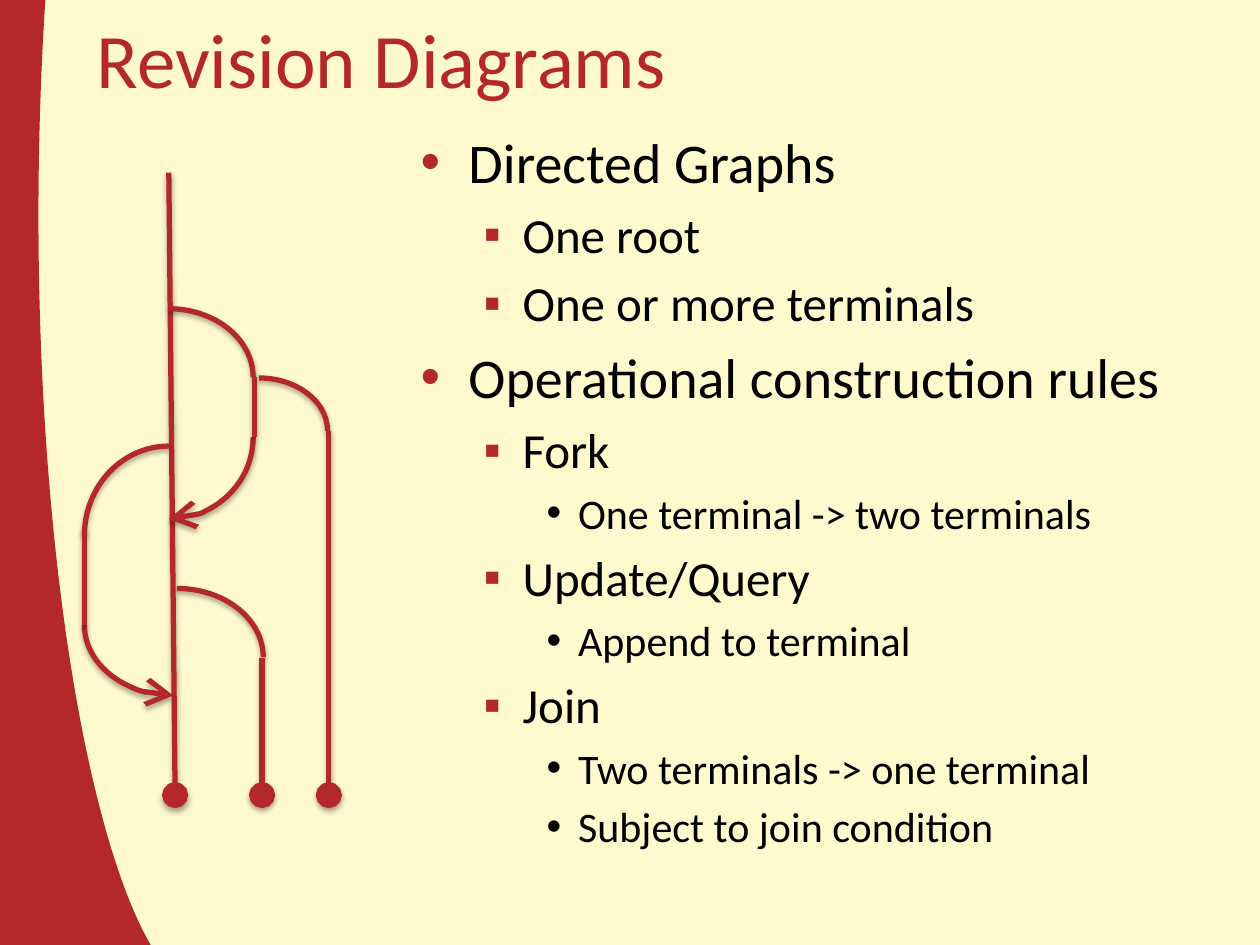
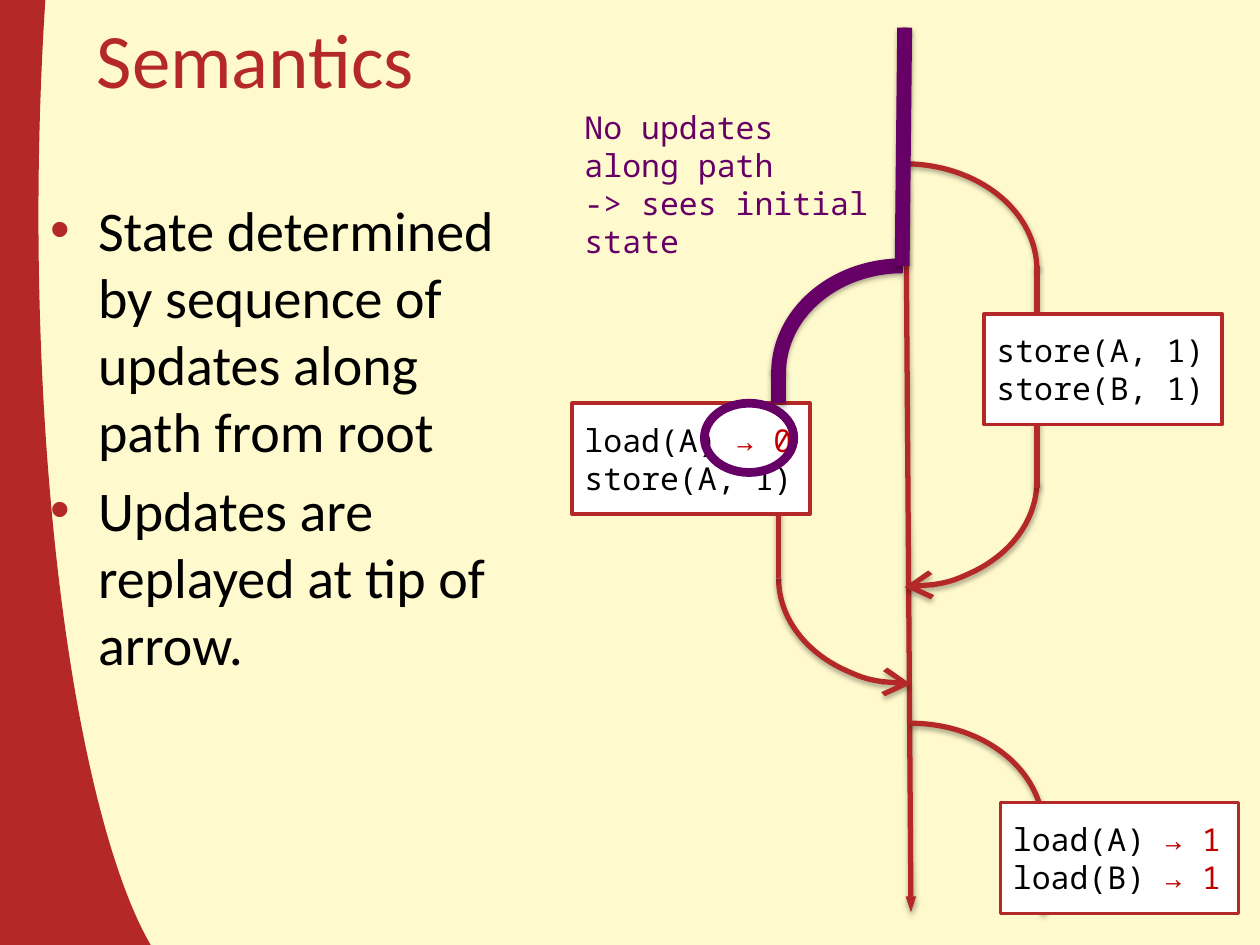
import lxml.etree
import pptx
import pptx.dml.color
import pptx.enum.shapes
import pptx.enum.text
import pptx.oxml.ns
import pptx.util

Inches = pptx.util.Inches
Pt = pptx.util.Pt
RGBColor = pptx.dml.color.RGBColor
Shape = pptx.enum.shapes.MSO_SHAPE
Anchor = pptx.enum.text.MSO_ANCHOR
qn = pptx.oxml.ns.qn

CREAM = RGBColor(0xFF, 0xFA, 0xCD)
RED = RGBColor(0xB4, 0x28, 0x28)
RESULT_RED = RGBColor(0xC0, 0x00, 0x00)
PURPLE = RGBColor(0x66, 0x00, 0x66)
BLACK = RGBColor(0, 0, 0)
WHITE = RGBColor(0xFF, 0xFF, 0xFF)

TITLE_FONT = {"name": "Calibri", "size": Pt(44)}
CODE_FONT = {"name": "Noto Sans Mono", "size": Pt(18)}
# Text size, left margin, hanging indent, bullet, bullet font, bullet colour
LEVELS = [
    (32, 0.38, 0.38, "•", "Arial", RED),
    (28, 0.81, 0.31, "▪", "Arial", RED),
    (24, 1.25, 0.25, "•", "Arial", BLACK),
]
# Width and length of each kind of line end
LINE_ENDS = {"arrow": ("lg", "lg"), "oval": ("lg", "lg"), "triangle": ("sm", "med")}
PATH_WIDTH = 3
HIGHLIGHT_WIDTH = 8.5
CODE_SIZE = (1.89, 0.88)
# Start and end angles of the side band, in units of 100000/60000 degree
BAND_ANGLES = (177.67, 55.34)


def add_child(parent, tag, **attributes):
    child = lxml.etree.SubElement(parent, qn(tag))
    for name, value in attributes.items():
        child.set(name, str(value))
    return child


def add_shadow(shape):
    effects = add_child(shape.element.spPr, "a:effectLst")
    shadow = add_child(effects, "a:outerShdw", blurRad=40000, dist=23000,
                       dir=5400000, rotWithShape=0)
    colour = add_child(shadow, "a:srgbClr", val=BLACK)
    add_child(colour, "a:alpha", val=35000)


def set_line(shape, colour, width):
    shape.line.color.rgb = colour
    shape.line.width = Pt(width)


def add_line_end(shape, tag, kind):
    if kind:
        width, length = LINE_ENDS[kind]
        add_child(shape.element.spPr.find(qn("a:ln")), tag,
                  type=kind, w=width, len=length)


def place(origin, box):
    """Turn a box relative to origin into lengths on the slide."""
    left, top, width, height = box
    return [Inches(value) for value in
            (origin[0] + left, origin[1] + top, width, height)]


def add_arc(slide, origin, box, flip="", head=None, colour=RED, width=PATH_WIDTH):
    arc = slide.shapes.add_shape(Shape.ARC, *place(origin, box))
    arc.fill.background()
    set_line(arc, colour, width)
    add_line_end(arc, "a:headEnd", head)
    transform = arc.element.spPr.find(qn("a:xfrm"))
    for axis in flip:
        transform.set("flip" + axis, "1")
    return arc


def add_path_arc(slide, origin, box, **options):
    add_shadow(add_arc(slide, origin, box, **options))


def add_path_line(slide, origin, start, end, tail=None, colour=RED, width=PATH_WIDTH):
    points = [Inches(origin[axis] + point[axis])
              for point in (start, end) for axis in (0, 1)]
    line = slide.shapes.add_connector(
        pptx.enum.shapes.MSO_CONNECTOR.STRAIGHT, *points)
    set_line(line, colour, width)
    add_line_end(line, "a:tailEnd", tail)
    add_shadow(line)


def add_run(paragraph, text, font, colour):
    run = paragraph.add_run()
    run.text = text
    for name, value in font.items():
        setattr(run.font, name, value)
    run.font.color.rgb = colour


def fill_text(shape, paragraphs, font, anchor=Anchor.MIDDLE):
    """Write paragraphs, each a list of (text, colour) runs."""
    frame = shape.text_frame
    frame.word_wrap = True
    frame.vertical_anchor = anchor
    for index, runs in enumerate(paragraphs):
        paragraph = frame.add_paragraph() if index else frame.paragraphs[0]
        paragraph.alignment = pptx.enum.text.PP_ALIGN.LEFT
        for text, colour in runs:
            add_run(paragraph, text, font, colour)


def add_text(slide, origin, box, paragraphs, font):
    fill_text(slide.shapes.add_textbox(*place(origin, box)), paragraphs, font)


def add_bullets(slide, box, items):
    """Write a bulleted list of (level, lines) items."""
    frame = slide.shapes.add_textbox(*place((0, 0), box)).text_frame
    frame.word_wrap = True
    for index, (level, lines) in enumerate(items):
        size, margin, indent, bullet, bullet_font, colour = LEVELS[level]
        paragraph = frame.add_paragraph() if index else frame.paragraphs[0]
        paragraph.level = level
        paragraph.space_before = Pt(size * 0.2)
        for number, line in enumerate(lines.split("\n")):
            if number:
                paragraph.add_line_break()
            add_run(paragraph, line, {"name": "Calibri", "size": Pt(size)}, BLACK)
        properties = paragraph._p.get_or_add_pPr()
        properties.set("marL", str(Inches(margin)))
        properties.set("indent", str(-Inches(indent)))
        add_child(add_child(properties, "a:buClr"), "a:srgbClr", val=colour)
        add_child(properties, "a:buFont", typeface=bullet_font)
        add_child(properties, "a:buChar", char=bullet)


def add_code_box(slide, origin, corner, lines):
    box = slide.shapes.add_shape(Shape.RECTANGLE, *place(origin, corner + CODE_SIZE))
    box.shadow.inherit = False
    box.fill.solid()
    box.fill.fore_color.rgb = WHITE
    set_line(box, RED, 2)
    fill_text(box, lines, CODE_FONT)


def add_titled_slide(presentation, title):
    """Start a slide with the cream background, red side band and title."""
    slide = presentation.slides.add_slide(presentation.slide_layouts[6])
    slide.background.fill.solid()
    slide.background.fill.fore_color.rgb = CREAM
    band = add_arc(slide, (0, 0), (-0.25, -4.83, 3.08, 13.08), flip="H", width=80)
    band.shadow.inherit = False
    for index, angle in enumerate(BAND_ANGLES):
        band.adjustments[index] = angle
    add_text(slide, (0, 0), (0.67, -0.17, 9, 1.25), [[(title, RED)]], TITLE_FONT)
    return slide


def add_revision_diagram(slide, origin):
    add_path_line(slide, origin, (0.67, 0), (0.72, 4.94), tail="oval")
    for box, flip, head in [
        ((0, 1.08, 1.34, 1.09), "", None),
        ((0, 1.45, 1.34, 1.3), "V", "arrow"),
        ((0, 2.17, 1.34, 1.42), "H", None),
        ((0, 3.03, 1.41, 1.12), "HV", "arrow"),
        ((0.84, 1.63, 1.09, 0.84), "", None),
        ((0.05, 3.3, 1.37, 1.09), "", None),
    ]:
        add_path_arc(slide, origin, box, flip=flip, head=head)
    for x, top, bottom, tail in [
        (1.35, 1.62, 2.1, None),
        (0, 2.83, 3.59, None),
        (1.94, 2.05, 4.94, "oval"),
        (1.41, 3.85, 4.94, "oval"),
    ]:
        add_path_line(slide, origin, (x, top), (x, bottom), tail=tail)


def add_semantics_diagram(slide, origin):
    highlight = {"colour": PURPLE, "width": HIGHLIGHT_WIDTH}
    add_path_line(slide, origin, (2.64, 0), (2.69, 7.02), tail="triangle")
    for left, top, flip, head in [
        (1.59, 1.08, "", None),
        (1.59, 2.76, "V", "arrow"),
        (1.64, 3.53, "HV", "arrow"),
        (1.64, 5.52, "", None),
    ]:
        add_path_arc(slide, origin, (left, top, 2.1, 1.68), flip=flip, head=head)
    add_path_arc(slide, origin, (1.64, 1.89, 1.97, 1.7), flip="H", **highlight)
    for x, top, bottom in [(3.69, 1.89, 3.65), (1.64, 2.74, 4.37), (3.74, 6.36, 7.03)]:
        add_path_line(slide, origin, (x, top), (x, bottom))

    for corner, lines in [
        ((0, 2.98), [[("load(A) ", BLACK), ("→ 0", RESULT_RED)],
                     [("store(A, 1)", BLACK)]]),
        ((3.27, 2.27), [[("store(A, 1)", BLACK)], [("store(B, 1)", BLACK)]]),
        ((3.4, 6.15), [[("load(A) ", BLACK), ("→ 1", RESULT_RED)],
                       [("load(B) ", BLACK), ("→ 1", RESULT_RED)]]),
    ]:
        add_code_box(slide, origin, corner, lines)

    add_path_line(slide, origin, (2.64, 0), (2.62, 1.89), **highlight)
    add_path_line(slide, origin, (1.64, 2.71), (1.64, 2.98), **highlight)
    result_ring = slide.shapes.add_shape(
        Shape.OVAL, *place(origin, (1.05, 2.98, 0.71, 0.55)))
    result_ring.shadow.inherit = False
    result_ring.fill.background()
    set_line(result_ring, PURPLE, 5)
    add_text(slide, origin, (0, 0.55, 2.52, 1.38),
             [[("No updates along path", PURPLE)],
              [("-> sees initial state", PURPLE)]], CODE_FONT)


def build_revision_slide(presentation):
    slide = add_titled_slide(presentation, "Revision Diagrams")
    add_bullets(slide, (3.24, 0.96, 6.47, 6.31), [
        (0, "Directed Graphs"),
        (1, "One root"),
        (1, "One or more terminals"),
        (0, "Operational construction rules"),
        (1, "Fork"),
        (2, "One terminal -> two terminals"),
        (1, "Update/Query"),
        (2, "Append to terminal"),
        (1, "Join"),
        (2, "Two terminals -> one terminal"),
        (2, "Subject to join condition"),
    ])
    add_revision_diagram(slide, (0.67, 1.37))


def build_semantics_slide(presentation):
    slide = add_titled_slide(presentation, "Semantics")
    add_bullets(slide, (0.3, 1.5, 4.03, 6), [
        (0, "State determined by sequence of updates along path from root"),
        (0, "Updates are\nreplayed at tip of arrow."),
    ])
    add_semantics_diagram(slide, (4.54, 0.22))


def main():
    presentation = pptx.Presentation()
    presentation.slide_width = Inches(10)
    presentation.slide_height = Inches(7.5)
    build_revision_slide(presentation)
    build_semantics_slide(presentation)
    presentation.save("out.pptx")


if __name__ == "__main__":
    main()
